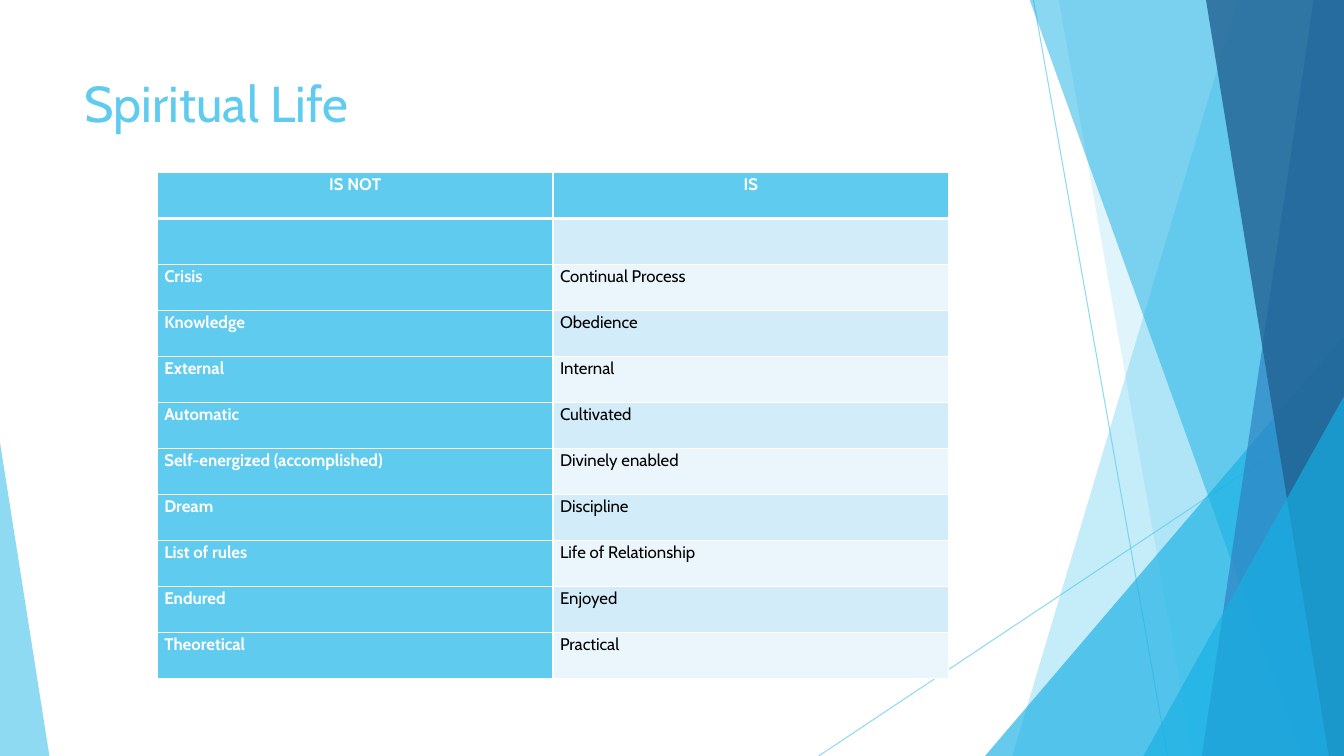
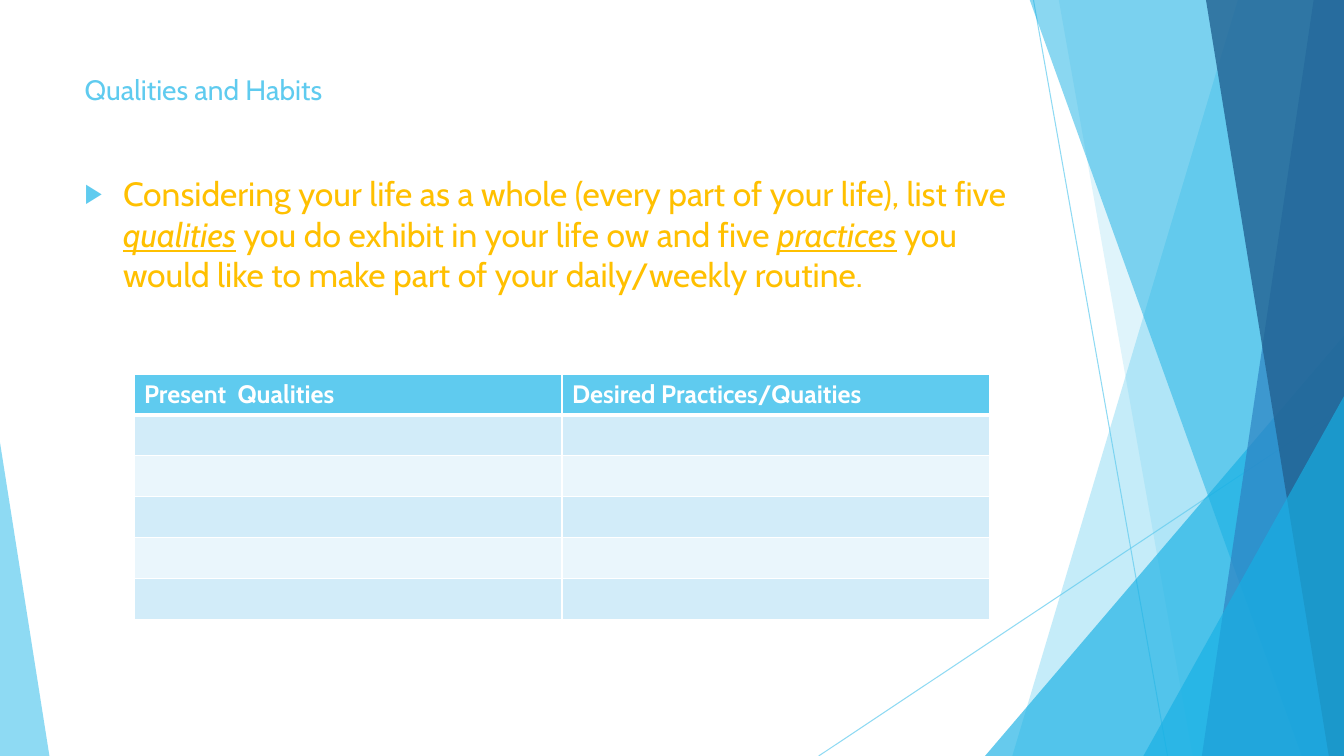
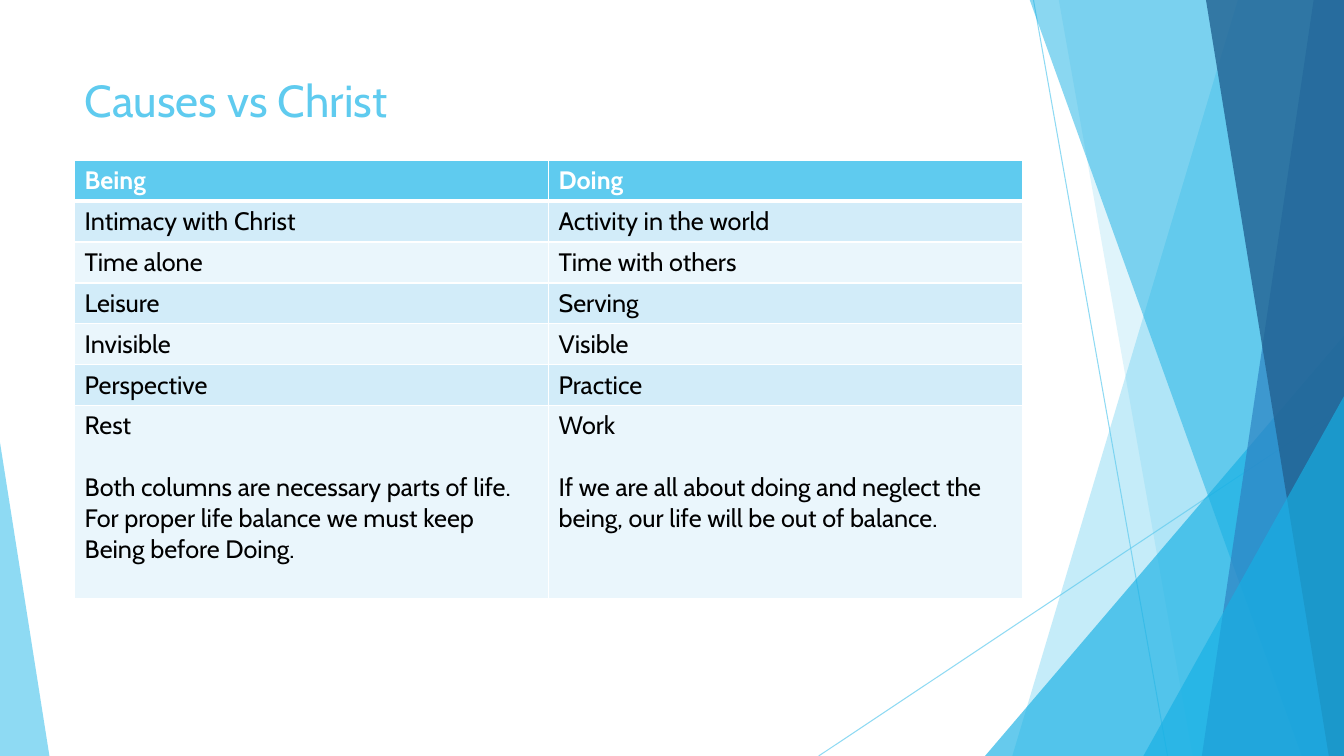
import pptx
import pptx.dml.color
import pptx.enum.shapes
import pptx.enum.text
import pptx.oxml.ns
import pptx.util
from lxml import etree

Inches = pptx.util.Inches
Pt = pptx.util.Pt
qn = pptx.oxml.ns.qn
PP_ALIGN = pptx.enum.text.PP_ALIGN

COLORS = {
    "sky": "5FCBEF", "cyan": "17B0E4", "blue": "2E83C3", "navy": "226292",
    "gold": "FFC000", "band": "D2ECF9", "pale": "EAF6FC",
    "white": "FFFFFF", "black": "000000",
}
FONT = "Cabin"
WIDTH, HEIGHT = 13.33, 7.5
LEFT, TOP, CONTENT_WIDTH = 0.74, 0.67, 9.4
TITLE_ONLY, TITLE_AND_BODY = 5, 1


def rgb(name):
    return pptx.dml.color.RGBColor.from_string(COLORS[name])


def add_child(parent, tag, **attrs):
    return etree.SubElement(parent, qn(tag), attrs)


class Deck:
    """Holds the shared style and the slide being built."""

    def __init__(self):
        self.prs = pptx.Presentation()
        self.prs.slide_width = Inches(WIDTH)
        self.prs.slide_height = Inches(HEIGHT)
        self.slide = None

    def new_slide(self, title, size, height, layout=TITLE_ONLY):
        first = self.slide is None
        self.slide = self.prs.slides.add_slide(self.prs.slide_layouts[layout])
        if first:
            self.facets()
        sp = self.slide.shapes.title
        tf = self.place(sp, TOP, height)
        tf.text = title
        p = tf.paragraphs[0]
        p.alignment = PP_ALIGN.LEFT
        self.style(p.runs[0], size, "sky")

    def place(self, sp, top, height):
        sp.left, sp.top = Inches(LEFT), Inches(top)
        sp.width, sp.height = Inches(CONTENT_WIDTH), Inches(height)
        tf = sp.text_frame
        tf.word_wrap = True
        tf.auto_size = pptx.enum.text.MSO_AUTO_SIZE.NONE
        tf.vertical_anchor = pptx.enum.text.MSO_ANCHOR.TOP
        return tf

    def style(self, r, size, color, bold=False):
        r.font.name, r.font.size, r.font.bold = FONT, Pt(size), bold
        r.font.color.rgb = rgb(color)

    def facets(self):
        """Draw the decoration once and move it to the slide master."""
        parts = [
            self.line(10.25, 0, 11.58, HEIGHT),
            self.line(WIDTH, 4.03, 8.12, HEIGHT),
            self.band(12.28, 10.04, "sky", 36),
            self.band(10.5, 11.83, "sky", 20),
            self.triangle(9.77, 3.33, 3.56, 1, "cyan", 66),
            self.band(10.21, 12.91, "cyan", 50),
            self.band(13.03, 11.92, "blue", 70),
            self.band(11.96, 13.18, "navy", 80),
            self.triangle(11.34, 3.93, 1.99, 1, "cyan", 66),
            self.triangle(0, 4.39, 0.49, 0, "sky", 70),
        ]
        tree = self.prs.slide_master.shapes.element
        for index, part in enumerate(parts, start=2):
            tree.insert(index, part.element)

    def fade(self, sp, percent):
        for color in sp.element.spPr.iter(qn("a:srgbClr")):
            add_child(color, "a:alpha", val=str(percent * 1000))

    def line(self, x1, y1, x2, y2):
        sp = self.slide.shapes.add_connector(
            pptx.enum.shapes.MSO_CONNECTOR.STRAIGHT,
            Inches(x1), Inches(y1), Inches(x2), Inches(y2))
        sp.line.color.rgb = rgb("sky")
        sp.line.width = Pt(0.75)
        add_child(sp.element.spPr, "a:effectLst")
        self.fade(sp, 70)
        return sp

    def paint(self, sp, color, opacity):
        sp.shadow.inherit = False
        sp.fill.solid()
        sp.fill.fore_color.rgb = rgb(color)
        sp.line.fill.background()
        self.fade(sp, opacity)
        return sp

    def band(self, top_x, bottom_x, color, opacity):
        """Full-height area from a slanted edge to the right side."""
        y = -0.01
        builder = self.slide.shapes.build_freeform(Inches(top_x), Inches(y))
        corners = [(WIDTH, y), (WIDTH, HEIGHT), (bottom_x, HEIGHT)]
        builder.add_line_segments([(Inches(a), Inches(b)) for a, b in corners])
        return self.paint(builder.convert_to_shape(), color, opacity)

    def triangle(self, left, top, width, apex, color, opacity):
        sp = self.slide.shapes.add_shape(
            pptx.enum.shapes.MSO_SHAPE.ISOSCELES_TRIANGLE,
            Inches(left), Inches(top), Inches(width), Inches(HEIGHT - top))
        sp.adjustments[0] = apex
        return self.paint(sp, color, opacity)

    def bullet(self, pieces, top, height):
        """Fill the body with one bullet; every second piece is emphasised."""
        tf = self.place(self.slide.placeholders[1], top, height)
        p = tf.paragraphs[0]
        pPr = p._p.get_or_add_pPr()
        indent = Inches(0.38)
        pPr.set("marL", str(indent))
        pPr.set("indent", str(-indent))
        add_child(add_child(pPr, "a:buClr"), "a:srgbClr", val=COLORS["sky"])
        add_child(pPr, "a:buSzPct", val="80000")
        add_child(pPr, "a:buChar", char="▶")
        p.space_before = Pt(0)
        for i, piece in enumerate(pieces):
            r = p.add_run()
            r.text = piece
            self.style(r, 24, "gold")
            r.font.italic = r.font.underline = i % 2 == 1

    def table(self, rows, left, top, width, heights, size=18,
              label_column=False, compact=False):
        columns = len(rows[0])
        table = self.slide.shapes.add_table(
            len(rows), columns, Inches(left), Inches(top),
            Inches(width), Inches(sum(heights))).table
        table.horz_banding = False
        for column in table.columns:
            column.width = Inches(width / columns)
        for i, (texts, height) in enumerate(zip(rows, heights)):
            table.rows[i].height = Inches(height)
            for j, text in enumerate(texts):
                cell = table.cell(i, j)
                strong = i == 0 or (label_column and j == 0)
                self.borders(cell, i)
                cell.fill.solid()
                cell.fill.fore_color.rgb = rgb(
                    "sky" if strong else "band" if i % 2 else "pale")
                if compact:
                    cell.margin_left = cell.margin_right = Inches(0.07)
                    cell.margin_top = cell.margin_bottom = 0
                cell.text_frame.text = text
                for k, p in enumerate(cell.text_frame.paragraphs):
                    if compact:
                        p.line_spacing = 1.07
                        p.alignment = PP_ALIGN.LEFT if i else PP_ALIGN.CENTER
                    if k:
                        p.space_before = Pt(22)
                    for r in p.runs:
                        self.style(r, size, "white" if strong else "black", strong)

    def borders(self, cell, row):
        """White cell edges, thicker between the header and the first row."""
        tcPr = cell._tc.get_or_add_tcPr()
        for side in "LRTB":
            thick = (row, side) in ((0, "B"), (1, "T"))
            ln = add_child(tcPr, "a:ln" + side, w=str(Pt(3 if thick else 1)))
            fill = add_child(ln, "a:solidFill")
            add_child(fill, "a:srgbClr", val=COLORS["white"])


def main():
    deck = Deck()

    deck.new_slide("Spiritual Life", 36, 0.88)
    contrasts = [
        ("IS NOT", "IS"),
        ("", ""),
        ("Crisis", "Continual Process"),
        ("Knowledge", "Obedience"),
        ("External", "Internal"),
        ("Automatic", "Cultivated"),
        ("Self-energized (accomplished)", "Divinely enabled"),
        ("Dream", "Discipline"),
        ("List of rules", "Life of Relationship"),
        ("Endured", "Enjoyed"),
        ("Theoretical", "Practical"),
    ]
    deck.table(contrasts, 1.56, 1.71, 7.85, [0.457] * len(contrasts),
               size=12, label_column=True, compact=True)

    deck.new_slide("Qualities and Habits", 20, 0.76, TITLE_AND_BODY)
    deck.bullet([
        "Considering your life as a whole (every part of your life), list five ",
        "qualities",
        " you do exhibit in your life ow and five ",
        "practices",
        " you would like to make part of your daily/weekly routine.",
    ], 1.67, 4.94)
    habits = [("Present  Qualities", "Desired Practices/Quaities")] + [("", "")] * 5
    deck.table(habits, 1.33, 3.71, 8.49, [0.4] * len(habits))

    deck.new_slide("Causes vs Christ", 32, 0.92)
    balance = [
        ("Being", "Doing"),
        ("Intimacy with Christ", "Activity in the world"),
        ("Time alone", "Time with others"),
        ("Leisure", "Serving"),
        ("Invisible", "Visible"),
        ("Perspective", "Practice"),
        ("Rest\nBoth columns are necessary parts of life. "
         "For proper life balance we must keep Being before Doing.",
         "Work\nIf we are all about doing and neglect the being, "
         "our life will be out of balance."),
    ]
    deck.table(balance, LEFT, 1.59, CONTENT_WIDTH, [0.4] * 6 + [1.92])

    deck.prs.save("out.pptx")


if __name__ == "__main__":
    main()
